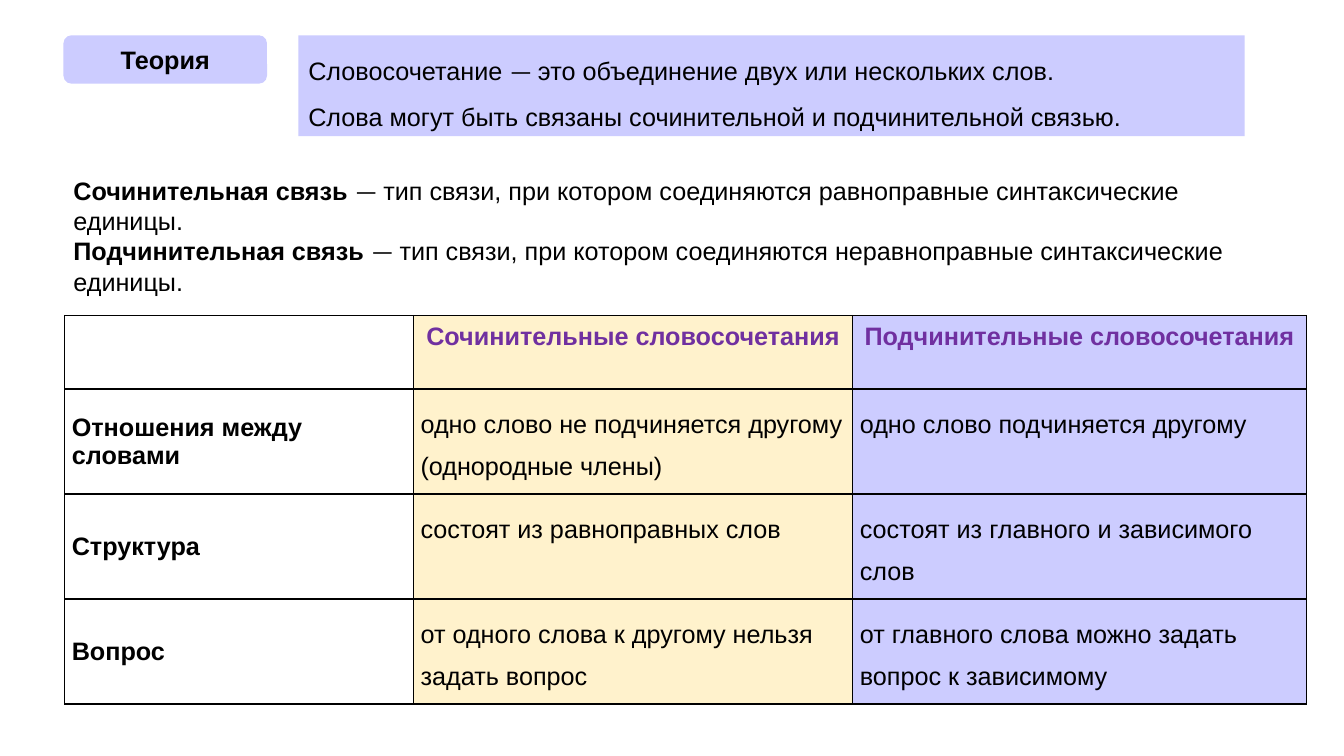
from lxml.etree import SubElement
from pptx import Presentation
from pptx.dml.color import RGBColor
from pptx.enum.shapes import MSO_SHAPE
from pptx.enum.text import MSO_ANCHOR, PP_ALIGN
from pptx.oxml.ns import qn
from pptx.util import Cm, Pt

BLACK, WHITE = "000000", "FFFFFF"
LILAC, CREAM, PURPLE = "CCCCFF", "FFF2CC", "7030A0"
DASH = ("— ", False, "Calibri")

HEAD = ["", "Сочинительные словосочетания", "Подчинительные словосочетания"]
BODY = [
    ["Отношения между словами",
     "одно слово не подчиняется другому (однородные члены)",
     "одно слово подчиняется другому"],
    ["Структура",
     "состоят из равноправных слов",
     "состоят из главного и зависимого слов"],
    ["Вопрос",
     "от одного слова к другому нельзя задать вопрос",
     "от главного слова можно задать вопрос к зависимому"],
]


def color(code):
    return RGBColor.from_string(code)


def write(frame, paras, align=PP_ALIGN.LEFT, space=1.0, ink=BLACK):
    frame.word_wrap = True
    for i, runs in enumerate(paras):
        para = frame.paragraphs[0] if i == 0 else frame.add_paragraph()
        para.alignment = align
        para.line_spacing = space
        para.font.size = Pt(18)
        for text, bold, face in runs:
            run = para.add_run()
            run.text = text
            run.font.name = face
            run.font.size = Pt(18)
            run.font.bold = bold
            run.font.color.rgb = color(ink)


def panel(slide, kind, box, paras, align=PP_ALIGN.LEFT, space=1.0):
    shape = slide.shapes.add_shape(kind, *map(Cm, box))
    shape.shadow.inherit = False
    shape.fill.solid()
    shape.fill.fore_color.rgb = color(LILAC)
    shape.line.fill.background()
    shape.text_frame.vertical_anchor = MSO_ANCHOR.MIDDLE
    write(shape.text_frame, paras, align, space)


def header(slide, left, top, width):
    label, gap = 5.13, 0.79
    panel(slide, MSO_SHAPE.ROUNDED_RECTANGLE, (left, top, label, 1.22),
          [[("Теория", True, "Arial")]], PP_ALIGN.CENTER)
    panel(slide, MSO_SHAPE.RECTANGLE,
          (left + label + gap, top, width - label - gap, 2.54),
          [[("Словосочетание ", False, "Arial"), DASH,
            ("это объединение двух или нескольких слов.", False, "Arial")],
           [("Слова могут быть связаны сочинительной и подчинительной связью.",
             False, "Arial")]], space=1.5)


def terms(slide, box):
    frame = slide.shapes.add_textbox(*map(Cm, box)).text_frame
    frame.vertical_anchor = MSO_ANCHOR.MIDDLE
    pairs = [("Сочинительная", "равноправные"),
             ("Подчинительная", "неравноправные")]
    write(frame, [
        [(f"{name} связь ", True, "Arial"), DASH,
         (f"тип связи, при котором соединяются {units} синтаксические единицы.",
          False, "Arial")]
        for name, units in pairs])


def border(cell):
    props = cell._tc.get_or_add_tcPr()
    for side in ("a:lnL", "a:lnR", "a:lnT", "a:lnB"):
        line = SubElement(props, qn(side), w=str(Pt(1)))
        fill = SubElement(line, qn("a:solidFill"))
        SubElement(fill, qn("a:srgbClr"), val=BLACK)


def grid(slide, left, top, widths, heights):
    rows = [HEAD] + BODY
    table = slide.shapes.add_table(
        len(rows), len(widths), Cm(left), Cm(top),
        Cm(sum(widths)), Cm(sum(heights))).table
    table.first_row = table.horz_banding = False
    for col, width in zip(table.columns, widths):
        col.width = Cm(width)
    for row, height in zip(table.rows, heights):
        row.height = Cm(height)
    for r, texts in enumerate(rows):
        for c, text in enumerate(texts):
            cell = table.cell(r, c)
            cell.margin_left = cell.margin_right = Cm(0.18)
            cell.margin_top = cell.margin_bottom = Cm(0.18)
            border(cell)
            cell.fill.solid()
            cell.fill.fore_color.rgb = color((WHITE, CREAM, LILAC)[c])
            top_row, side = r == 0, c == 0
            cell.vertical_anchor = MSO_ANCHOR.MIDDLE if side else MSO_ANCHOR.TOP
            write(cell.text_frame,
                  [[(text, top_row or side, "Arial")] if text else []],
                  PP_ALIGN.CENTER if top_row else PP_ALIGN.LEFT,
                  1.0 if top_row or side else 1.5,
                  PURPLE if top_row else BLACK)


def main():
    deck = Presentation()
    deck.slide_width, deck.slide_height = Cm(33.87), Cm(19.05)
    slide = deck.slides.add_slide(deck.slide_layouts[6])
    header(slide, 1.6, 0.89, 29.77)
    terms(slide, (1.6, 3.68, 30.68, 4.52))
    grid(slide, 1.63, 7.95, [8.79, 11.07, 11.43], [1.85] + [2.59] * 3)
    deck.save("out.pptx")


if __name__ == "__main__":
    main()
